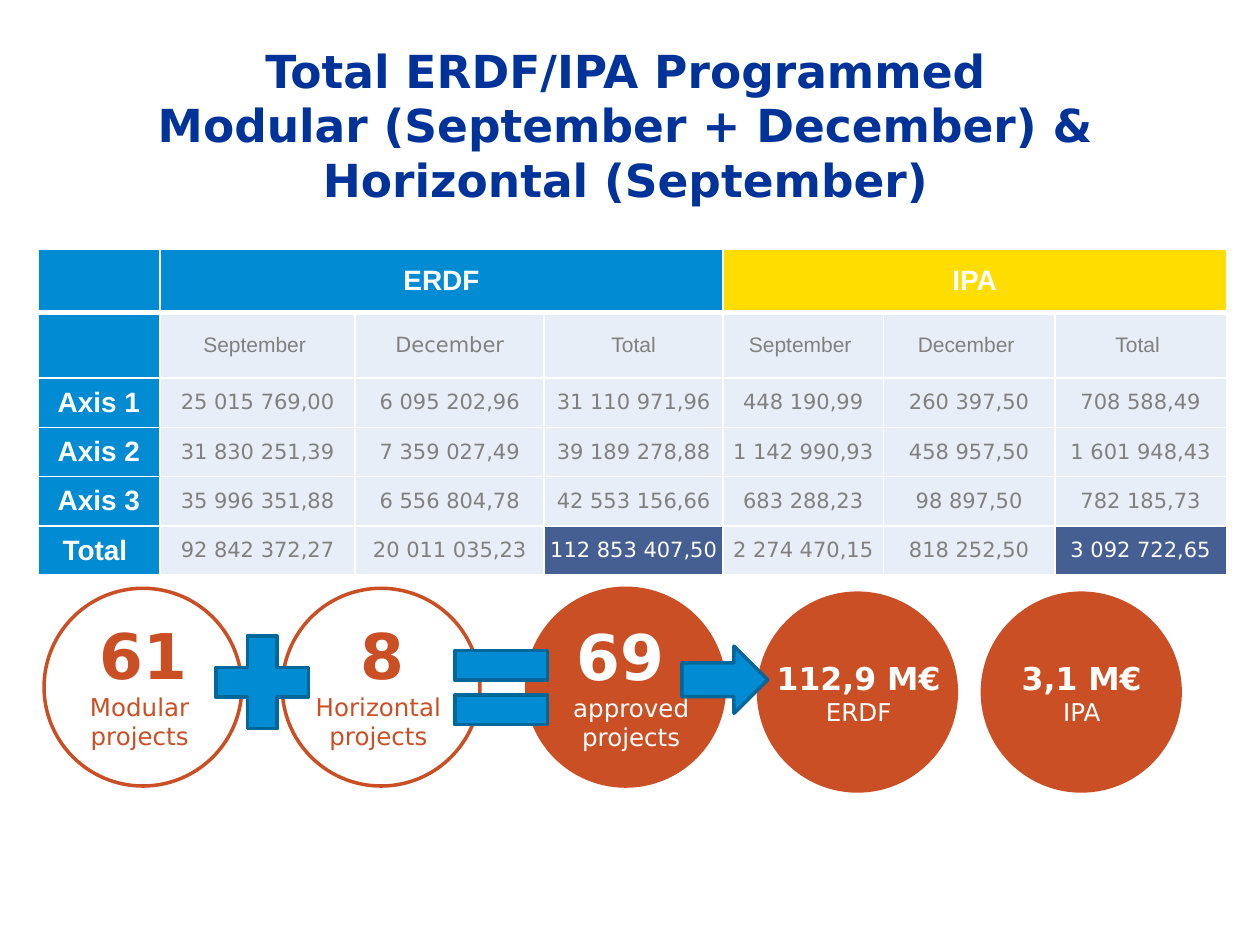
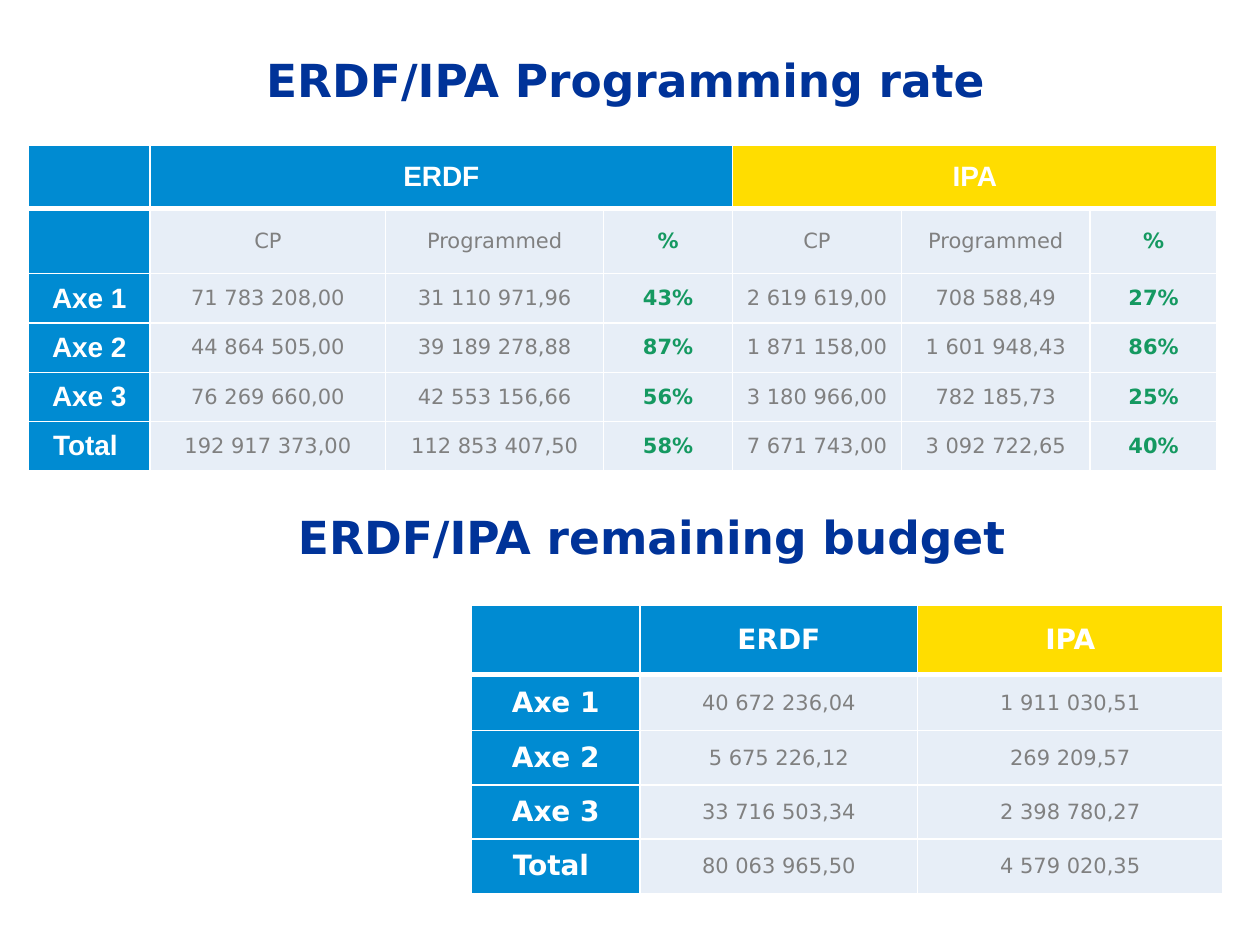
import pptx
import pptx.dml.color
import pptx.enum.shapes
import pptx.enum.text
import pptx.util
from lxml import etree
from pptx.oxml.ns import qn

Pt = pptx.util.Pt
Shape = pptx.enum.shapes.MSO_SHAPE

COLOURS = {
    "title": "003399", "blue": "008BD2", "blue edge": "00679B", "yellow": "FFDD00",
    "pale": "E7EEF7", "highlight": "465F92", "grey": "808080", "green": "159961",
    "orange": "CA4F24", "white": "FFFFFF",
}
SANS, ARIAL = "DejaVu Sans", "Arial"

PROGRAMMED = {
    "at": (21.6, 142.6),
    "columns": [69.8, 111.6, 108, 102.2, 91.6, 98, 98],
    "rows": [36, 37.4] + [28.2] * 4,
    "label font": ARIAL,
    "groups": [("ERDF", 3, "blue"), ("IPA", 3, "yellow")],
    "subheads": [("September ", ARIAL), ("December", SANS), ("Total", ARIAL),
                 ("September ", ARIAL), ("December ", ARIAL), ("Total ", ARIAL)],
    "body": [
        ("Axis 1", "25 015 769,00", "6 095 202,96", "31 110 971,96",
         "448 190,99", "260 397,50", "708 588,49"),
        ("Axis 2", "31 830 251,39", "7 359 027,49", "39 189 278,88",
         "1 142 990,93", "458 957,50", "1 601 948,43"),
        ("Axis 3", "35 996 351,88", "6 556 804,78", "42 553 156,66",
         "683 288,23", "98 897,50", "782 185,73"),
        ("Total ", "92 842 372,27", "20 011 035,23", "112 853 407,50",
         "2 274 470,15", "818 252,50", "3 092 722,65"),
    ],
    "highlights": ["112 853 407,50", "3 092 722,65"],
}
RATE = {
    "at": (16.2, 83),
    "columns": [69.6, 134.6, 124.6, 73.6, 96.6, 107.8, 72.6],
    "rows": [36, 37.4] + [28.2] * 4,
    "label font": ARIAL,
    "groups": [("ERDF", 3, "blue"), ("IPA", 3, "yellow")],
    "subheads": [("CP", SANS), ("Programmed", SANS), ("%", SANS)] * 2,
    "body": [
        ("Axe 1", "71 783 208,00", "31 110 971,96", "43%",
         "2 619 619,00", "708 588,49", "27%"),
        ("Axe 2", "44 864 505,00", "39 189 278,88", "87%",
         "1 871 158,00", "1 601 948,43", "86%"),
        ("Axe 3", "76 269 660,00", "42 553 156,66", "56%",
         "3 180 966,00", "782 185,73", "25%"),
        ("Total ", "192 917 373,00", "112 853 407,50", "58%",
         "7 671 743,00", "3 092 722,65", "40%"),
    ],
    "highlights": [],
}
REMAINING = {
    "at": (269.4, 346),
    "columns": [96.4, 158.6, 174.4],
    "rows": [39.6, 32] + [31] * 3,
    "label font": SANS,
    "groups": [("ERDF", 1, "blue"), ("IPA", 1, "yellow")],
    "subheads": [],
    "body": [
        ("Axe 1", "40 672 236,04", "1 911 030,51"),
        ("Axe 2", "5 675 226,12", "269 209,57"),
        ("Axe 3", "33 716 503,34", "2 398 780,27"),
        ("Total ", "80 063 965,50", "4 579 020,35"),
    ],
    "highlights": [],
}

CIRCLE_SIZE = 113
# circle left and top, filled, text box (left, top, width, height), figure, figure size, caption
CIRCLES = [
    ((301, 336.2), True, (320.4, 349.2, 80.6, 85), "69 ", 36, ["approved", "projects"]),
    ((25.2, 336.2), False, (43.9, 348.5, 76.3, 85), "61 ", 36, ["Modular ", "projects "]),
    ((161.3, 336.2), False, (172.8, 348.5, 91.4, 85), "8", 36, ["Horizontal ", "projects "]),
    ((433.5, 339), True, (436.3, 373, 108.7, 46), "112,9 M€", 18, ["ERDF"]),
    ((561.4, 339), True, (576.7, 373, 82.8, 46), "3,1 M€", 18, ["IPA"]),
]
OPERATORS = [
    (Shape.MATH_PLUS, (113.8, 354, 72, 72)),
    (Shape.MATH_EQUAL, (250.4, 357, 72, 72)),
    (Shape.RIGHT_ARROW, (389.6, 369.2, 49, 38.4)),
]


def colour(name):
    return pptx.dml.color.RGBColor.from_string(COLOURS[name])


def points(*lengths):
    return [Pt(length) for length in lengths]


def write(frame, text, size=12, font=SANS, ink="grey", bold=False, new=False):
    """Write one centred paragraph, in a new paragraph if asked."""
    paragraph = frame.add_paragraph() if new else frame.paragraphs[0]
    paragraph.alignment = pptx.enum.text.PP_ALIGN.CENTER
    run = paragraph.add_run()
    run.text = text
    run.font.size = Pt(size)
    run.font.name = font
    run.font.bold = bold
    run.font.color.rgb = colour(ink)


def add_text_box(shapes, box, wrap):
    frame = shapes.add_textbox(*points(*box)).text_frame
    frame.word_wrap = wrap
    frame.auto_size = pptx.enum.text.MSO_AUTO_SIZE.SHAPE_TO_FIT_TEXT
    return frame


def add_title(slide, left, top, *lines):
    frame = add_text_box(slide.shapes, (left, top, 683.3, 39 * len(lines)), True)
    for index, line in enumerate(lines):
        write(frame, line, size=26, ink="title", bold=True, new=index > 0)


def add_shape(shapes, kind, box, fill, line):
    shape = shapes.add_shape(kind, *points(*box))
    shape.shadow.inherit = False
    if fill:
        shape.fill.solid()
        shape.fill.fore_color.rgb = colour(fill)
    else:
        shape.fill.background()
    shape.line.color.rgb = colour(line)
    shape.line.width = Pt(2)


def style_cell(cell, fill, header):
    """Give a cell its white borders, thicker below the header, and its fill."""
    properties = cell._tc.get_or_add_tcPr()
    for side in "LRTB":
        width = 3 if header and side == "B" else 1
        border = etree.SubElement(properties, qn(f"a:ln{side}"), w=str(Pt(width)))
        solid = etree.SubElement(border, qn("a:solidFill"))
        etree.SubElement(solid, qn("a:srgbClr"), val=COLOURS["white"])
    cell.fill.solid()
    cell.fill.fore_color.rgb = colour(fill)
    cell.margin_left = cell.margin_right = cell.margin_top = cell.margin_bottom = 0
    cell.vertical_anchor = pptx.enum.text.MSO_ANCHOR.MIDDLE


def add_budget_table(slide, content):
    columns, rows = content["columns"], content["rows"]
    table = slide.shapes.add_table(
        len(rows), len(columns), *points(*content["at"], sum(columns), sum(rows))).table
    table.first_row = table.horz_banding = False
    for column, width in zip(table.columns, columns):
        column.width = Pt(width)
    for row, height in zip(table.rows, rows):
        row.height = Pt(height)

    label = {"size": 16, "font": content["label font"], "ink": "white", "bold": True}
    style_cell(table.cell(0, 0), "blue", True)
    start = 1
    for text, span, fill in content["groups"]:
        for column in range(start, start + span):
            style_cell(table.cell(0, column), fill, True)
        if span > 1:
            table.cell(0, start).merge(table.cell(0, start + span - 1))
        write(table.cell(0, start).text_frame, text, **label)
        start += span

    subheads = content["subheads"]
    lines = [[(text, SANS) for text in line] for line in content["body"]]
    if subheads:
        lines.insert(0, [("", SANS)] + subheads)
    for row, line in enumerate(lines, 1):
        for column, (text, font) in enumerate(line):
            cell = table.cell(row, column)
            highlighted = text in content["highlights"]
            fill = "blue" if column == 0 else "highlight" if highlighted else "pale"
            style_cell(cell, fill, False)
            if column == 0:
                if text:
                    write(cell.text_frame, text, **label)
            else:
                rate = "%" in text
                ink = "green" if rate else "white" if highlighted else "grey"
                write(cell.text_frame, text, font=font, ink=ink, bold=rate)


def add_circle(slide, corner, filled, box, figure, size, caption):
    shapes = slide.shapes.add_group_shape().shapes
    add_shape(shapes, Shape.OVAL, (*corner, CIRCLE_SIZE, CIRCLE_SIZE),
              "orange" if filled else None, "orange")
    ink = "white" if filled else "orange"
    frame = add_text_box(shapes, box, False)
    write(frame, figure, size=size, ink=ink, bold=True)
    for line in caption:
        write(frame, line, size=14, ink=ink, new=True)


def main():
    presentation = pptx.Presentation()
    presentation.slide_width, presentation.slide_height = points(720, 540)
    blank = presentation.slide_layouts[6]

    slide = presentation.slides.add_slide(blank)
    add_title(slide, 16, 21, "Total ERDF/IPA Programmed",
              "Modular (September + December) & Horizontal (September)")
    add_budget_table(slide, PROGRAMMED)
    for circle in CIRCLES:
        add_circle(slide, *circle)
    for kind, box in OPERATORS:
        add_shape(slide.shapes, kind, box, "blue", "blue edge")

    slide = presentation.slides.add_slide(blank)
    add_title(slide, 16, 26, "ERDF/IPA Programming rate")
    add_budget_table(slide, RATE)
    add_title(slide, 31, 287.4, "ERDF/IPA remaining budget")
    add_budget_table(slide, REMAINING)

    presentation.save("out.pptx")


if __name__ == "__main__":
    main()
